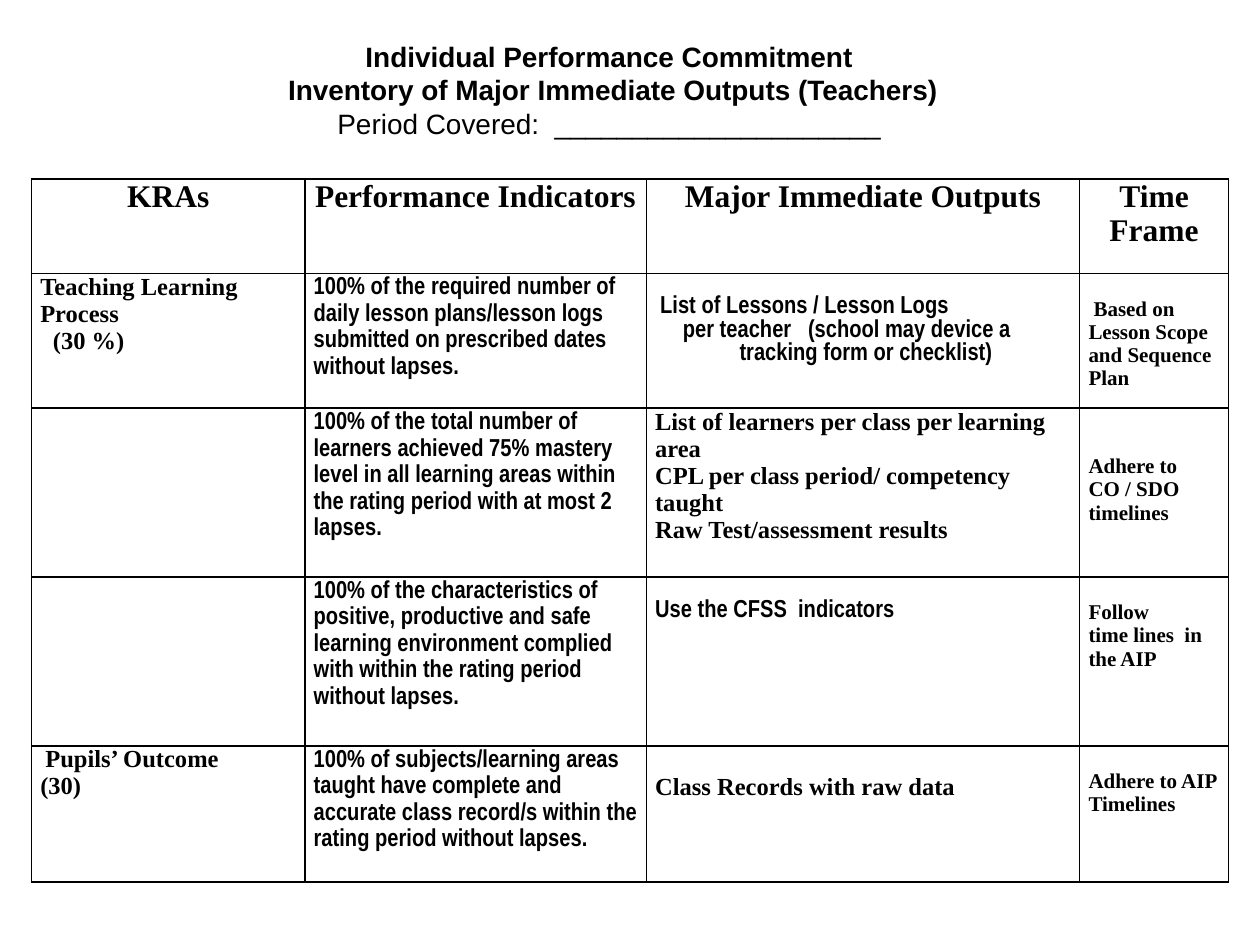
from lxml import etree
from pptx import Presentation
from pptx.dml.color import RGBColor
from pptx.enum.text import MSO_ANCHOR, PP_ALIGN
from pptx.oxml.ns import qn
from pptx.util import Inches, Pt

CENTER, LEFT = PP_ALIGN.CENTER, PP_ALIGN.LEFT
MIDDLE = MSO_ANCHOR.MIDDLE
COLORS = {"ink": "000000"}
SANS, NARROW, SERIF = "Arial", "Arial Narrow", "Times New Roman"

COLUMN_WIDTHS = [2.17, 2.71, 3.44, 1.18]
ROW_HEIGHTS = [0.75, 1.07, 1.34, 1.34, 1.08]
HEADINGS = ["KRAs", "Performance Indicators", "Major Immediate Outputs", "Time Frame"]

# Each cell: top margin in inches, font, and lines of (text, first-line indent in inches).
EMPTY = (0, SERIF, [("", 0)])
ROWS = [
    [
        (0, SERIF, [("Teaching Learning Process", 0), ("(30 %)", 0.1)]),
        (0, NARROW, [("100% of the required number of daily lesson plans/lesson logs "
                      "submitted on prescribed dates without lapses.", 0)]),
        (0.18, NARROW, [("List of Lessons / Lesson Logs", 0.04),
                        ("per teacher   (school may device a", 0.22),
                        ("tracking form or checklist)", 0.67)]),
        (0.19, SERIF, [("Based on Lesson Scope and Sequence Plan", 0.04)]),
    ],
    [
        EMPTY,
        (0, NARROW, [("100% of the total number of learners achieved 75% mastery level in all "
                      "learning areas within the rating period with at most 2 lapses.", 0)]),
        (0, SERIF, [("List of learners per class per learning area", 0),
                    ("CPL per class period/ competency taught", 0),
                    ("Raw Test/assessment results", 0)]),
        (0.37, SERIF, [("Adhere to CO / SDO timelines", 0)]),
    ],
    [
        EMPTY,
        (0, NARROW, [("100% of the characteristics of positive, productive and safe learning "
                      "environment complied with within the rating period without lapses.", 0)]),
        (0.18, NARROW, [("Use the CFSS  indicators", 0)]),
        (0.19, SERIF, [("Follow", 0), ("time lines  in the AIP", 0)]),
    ],
    [
        (0, SERIF, [("Pupils’ Outcome", 0.04), ("(30)", 0)]),
        (0, NARROW, [("100% of subjects/learning areas taught have complete and accurate class "
                      "record/s within the rating period without lapses.", 0)]),
        (0.22, SERIF, [("Class Records with raw data", 0)]),
        (0.19, SERIF, [("Adhere to AIP", 0), ("Timelines", 0)]),
    ],
]


def write_lines(frame, lines, font, size, align=LEFT, spacing=1.0):
    for number, (text, indent) in enumerate(lines):
        para = frame.paragraphs[0] if number == 0 else frame.add_paragraph()
        para.text = text
        para.alignment = align
        para.line_spacing = spacing
        para.font.name = font
        para.font.size = Pt(size)
        para.font.bold = True
        para.font.color.rgb = RGBColor.from_string(COLORS["ink"])
        if indent:
            properties = para._p.get_or_add_pPr()
            properties.set("marL", "0")
            properties.set("indent", str(Inches(indent)))


def style_cell(cell, top=0):
    """Set margins, an empty fill and a black border on every side."""
    cell.margin_left = cell.margin_right = Inches(0.07)
    cell.margin_top, cell.margin_bottom = Inches(top), 0
    properties = cell._tc.get_or_add_tcPr()
    for side in ("lnL", "lnR", "lnT", "lnB"):
        line = etree.SubElement(properties, qn(f"a:{side}"), w=str(Pt(1)))
        fill = etree.SubElement(line, qn("a:solidFill"))
        etree.SubElement(fill, qn("a:srgbClr"), val=COLORS["ink"])
    cell.fill.background()


def add_title(page, left, top, width, height):
    box = page.shapes.add_textbox(left, top, width, height)
    frame = box.text_frame
    frame.word_wrap = True
    frame.vertical_anchor = MIDDLE
    frame.margin_bottom = Inches(0.34)
    lines = [("Individual Performance Commitment", 0),
             ("Inventory of Major Immediate Outputs (Teachers)", 0.06),
             ("Period Covered:  _____________________", 0)]
    write_lines(frame, lines, SANS, 16, CENTER)
    frame.paragraphs[-1].font.bold = False


def add_outputs_table(page, left, top, width, height):
    table = page.shapes.add_table(len(ROW_HEIGHTS), len(COLUMN_WIDTHS),
                                  left, top, width, height).table
    table.first_row = table.horz_banding = False
    for column, share in zip(table.columns, COLUMN_WIDTHS):
        column.width = int(width * share / sum(COLUMN_WIDTHS))
    for row, share in zip(table.rows, ROW_HEIGHTS):
        row.height = int(height * share / sum(ROW_HEIGHTS))

    for cell, heading in zip(table.rows[0].cells, HEADINGS):
        style_cell(cell)
        write_lines(cell.text_frame, [(heading, 0)], SERIF, 18, CENTER)
    for row_number, entries in enumerate(ROWS, start=1):
        for column_number, (gap, font, lines) in enumerate(entries):
            cell = table.cell(row_number, column_number)
            style_cell(cell, gap)
            size = 12 if column_number == 3 else 14
            spacing = 1.15 if column_number == 1 else 1.0
            write_lines(cell.text_frame, lines, font, size, spacing=spacing)


def main():
    deck = Presentation()
    deck.slide_width, deck.slide_height = Inches(10), Inches(7.5)
    page = deck.slides.add_slide(deck.slide_layouts[6])
    add_outputs_table(page, Inches(0.25), Inches(1.42), Inches(9.5), Inches(5.58))
    add_title(page, Inches(1.25), Inches(0.25), Inches(7.17), Inches(1.21))
    deck.save("out.pptx")


if __name__ == "__main__":
    main()
